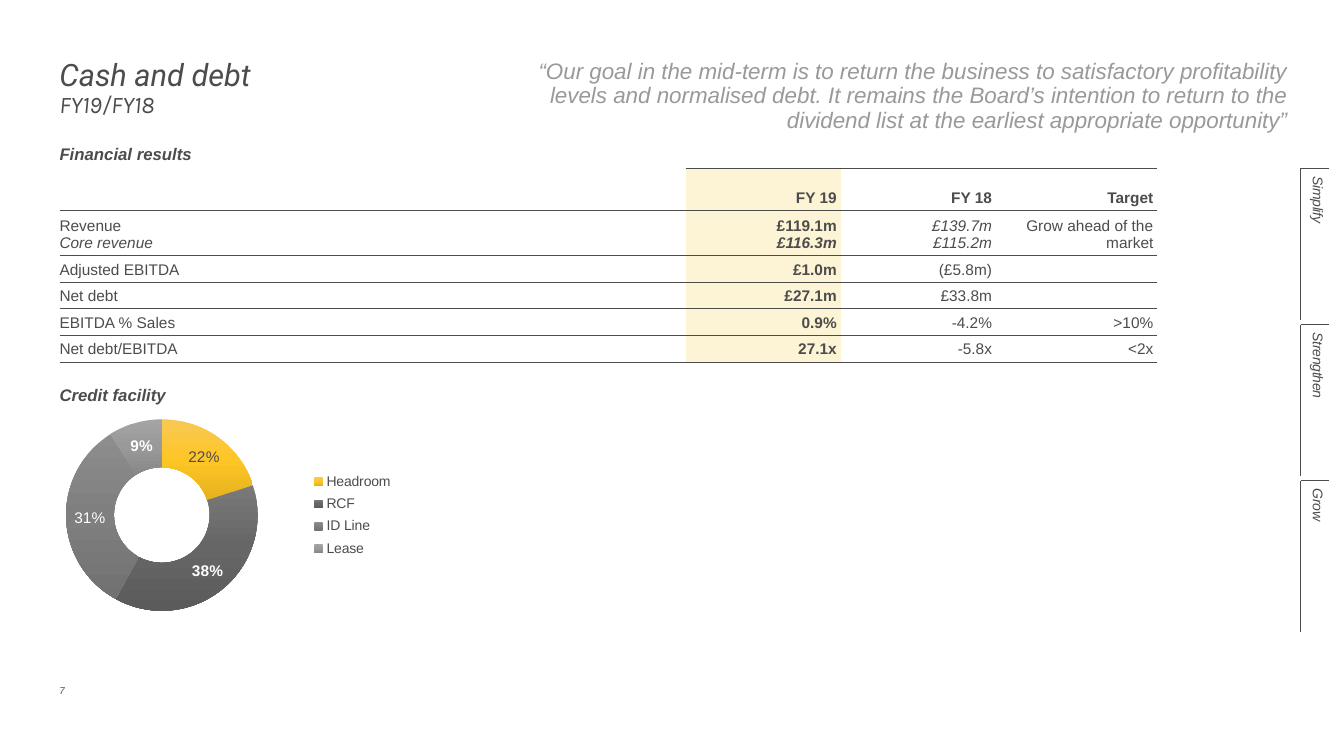
from copy import deepcopy
from dataclasses import dataclass

from lxml import etree
from pptx import Presentation
from pptx import util as u
from pptx.chart.data import CategoryChartData
from pptx.dml.color import RGBColor
from pptx.enum import chart as charts, shapes, text
from pptx.oxml import parse_xml
from pptx.oxml.ns import nsdecls, qn


@dataclass(frozen=True)
class Theme:
    ink: str = "4C4C4C"
    quiet: str = "999999"
    white: str = "FFFFFF"
    highlight: str = "FDF3D5"
    body_font: str = "Arial"
    title_font: str = "Roboto"
    subtitle_font: str = "Karla"
    title: float = 22
    subtitle: float = 17
    quote: float = 16
    heading: float = 12
    table: float = 11
    small: float = 10
    footer: float = 7
    rule: float = 0.5


THEME = Theme()
NO_STYLE = "{2D5ABB26-0587-4C30-8999-92F81FD0307C}"
COLUMNS = [621, 154, 154, 160]
ROWS = [27, 42, 42, 25, 25, 25, 25]
RESULTS = [
    ["Financial results", "", "", ""],
    ["", "FY 19", "FY 18", "Target"],
    ["Revenue\nCore revenue", "£119.1m\n£116.3m", "£139.7m\n£115.2m", "Grow ahead of the market"],
    ["Adjusted EBITDA", "£1.0m", "(£5.8m)", ""],
    ["Net debt", "£27.1m", "£33.8m", ""],
    ["EBITDA % Sales", "0.9%", "-4.2%", ">10%"],
    ["Net debt/EBITDA", "27.1x", "-5.8x", "<2x"],
]
FACILITY = {
    "Headroom": (20, ["F8C856", "FEC625", "E5B11E"]),
    "RCF": (38, ["797979", "666666", "5B5B5B"]),
    "ID Line": (33, ["8D8D8D", "7F7F7F", "717171"]),
    "Lease": (9, ["A4A4A4", "999999", "888888"]),
}
SHARE_NOTES = {0: ("22%", THEME.ink), 2: ("31%", THEME.white)}


def px(length):
    return u.Emu(length * 9144)


def style(font, size, color=THEME.ink, name=THEME.body_font, bold=False, italic=False):
    font.size, font.name, font.bold, font.italic = u.Pt(size), name, bold, italic
    font.color.rgb = RGBColor.from_string(color)


def add_text(slide, box, words, size, align=text.PP_ALIGN.LEFT, spacing=1.0,
             anchor=text.MSO_ANCHOR.TOP, **look):
    label = slide.shapes.add_textbox(*map(px, box))
    frame = label.text_frame
    frame.word_wrap = True
    frame.vertical_anchor = anchor
    frame.margin_left = frame.margin_right = frame.margin_top = frame.margin_bottom = 0
    paragraph = frame.paragraphs[0]
    paragraph.alignment, paragraph.line_spacing = align, spacing
    run = paragraph.add_run()
    run.text = words
    style(run.font, size, italic=True, **look)
    return label


def add_rule(slide, x1, y1, x2, y2):
    rule = slide.shapes.add_connector(shapes.MSO_CONNECTOR.STRAIGHT, *map(px, (x1, y1, x2, y2)))
    rule.line.width = u.Pt(THEME.rule)
    rule.line.color.rgb = RGBColor.from_string(THEME.ink)
    etree.SubElement(rule._element.spPr, qn("a:effectLst"))


def add_tabs(slide, box):
    left, top, width, height = box
    for index, pillar in enumerate(["Simplify", "Strengthen", "Grow"]):
        y = top + index * 155
        label = add_text(slide, (left - 55, y + 69, 142, 20), pillar, THEME.small)
        label.rotation = 90
        label.text_frame.paragraphs[0].runs[0].font._element.set("spc", "-20")
        add_rule(slide, left, y, left, y + height)
        add_rule(slide, left, y, left + width, y)


def add_header(slide, box):
    left, top, width, height = box
    add_text(slide, (left, top, 450, 31), "Cash and debt", THEME.title,
             spacing=0.9, name=THEME.title_font)
    add_text(slide, (left, top + 33, 450, 32), "FY19/FY18", THEME.subtitle,
             spacing=0.9, name=THEME.subtitle_font)
    add_text(slide, (left + width - 764, top + 1, 764, height),
             "“Our goal in the mid-term is to return the business to satisfactory "
             "profitability levels and normalised debt. It remains the Board’s intention "
             "to return to the dividend list at the earliest appropriate opportunity”",
             THEME.quote, text.PP_ALIGN.RIGHT, 0.9, color=THEME.quiet)


def underline(cell):
    line = parse_xml(
        f'<a:lnB {nsdecls("a")} w="{u.Pt(THEME.rule)}"><a:solidFill>'
        f'<a:srgbClr val="{THEME.ink}"/></a:solidFill></a:lnB>')
    cell._tc.get_or_add_tcPr().insert(0, line)


def fill_cell(cell, words, row, column):
    cell.margin_left = cell.margin_right = px(4 if column else 0)
    cell.margin_top = cell.margin_bottom = px(4)
    cell.vertical_anchor = text.MSO_ANCHOR.BOTTOM
    if row and column == 1:
        cell.fill.solid()
        cell.fill.fore_color.rgb = RGBColor.from_string(THEME.highlight)
    else:
        cell.fill.background()
    if row or column:
        underline(cell)
    frame = cell.text_frame
    for index, line in enumerate(words.split("\n")):
        paragraph = frame.add_paragraph() if index else frame.paragraphs[0]
        paragraph.alignment = text.PP_ALIGN.RIGHT if column else text.PP_ALIGN.LEFT
        if not line:
            etree.SubElement(paragraph._p, qn("a:endParaRPr"), sz=str(THEME.table * 100))
            continue
        run = paragraph.add_run()
        run.text = line
        style(run.font, THEME.table if row else THEME.heading,
              bold=row < 2 or column == 1,
              italic=row == 0 or index == 1 or (row == 2 and column == 2))


def add_results(slide, box):
    table = slide.shapes.add_table(len(ROWS), len(COLUMNS), *map(px, box)).table
    table.first_row = table.horz_banding = False
    table._tbl.tblPr.find(qn("a:tableStyleId")).text = NO_STYLE
    for column, width in zip(table.columns, COLUMNS):
        column.width = px(width)
    for row, height in zip(table.rows, ROWS):
        row.height = px(height)
    for row, entries in enumerate(RESULTS):
        for column, words in enumerate(entries):
            fill_cell(table.cell(row, column), words, row, column)


def place(parent, position, inner, x, y, w, h):
    for layout in parent.findall(qn("c:layout")):
        parent.remove(layout)
    target = '<c:layoutTarget val="inner"/>' if inner else ""
    parent.insert(position, parse_xml(
        f'<c:layout {nsdecls("c")}><c:manualLayout>{target}'
        f'<c:xMode val="edge"/><c:yMode val="edge"/><c:x val="{x}"/><c:y val="{y}"/>'
        f'<c:w val="{w}"/><c:h val="{h}"/></c:manualLayout></c:layout>'))


def shade(series):
    for index, (_, colors) in enumerate(FACILITY.values()):
        look = series.points[index].format
        look.line.fill.background()
        look.fill.gradient()
        look.fill.gradient_angle = 270
        first = look.fill.gradient_stops[0]._gs
        first.addnext(deepcopy(first))
        for stop, color, position in zip(look.fill.gradient_stops, colors, (0, 0.5, 1)):
            stop.color.rgb = RGBColor.from_string(color)
            stop.position = position


def add_facility(slide, box):
    left, top, width, height = box
    add_text(slide, (left, top, 331, 23), "Credit facility", THEME.heading,
             anchor=text.MSO_ANCHOR.BOTTOM, bold=True)
    data = CategoryChartData()
    data.categories = list(FACILITY)
    data.add_series("Series 1", [share for share, _ in FACILITY.values()])
    chart = slide.shapes.add_chart(charts.XL_CHART_TYPE.DOUGHNUT,
                                   *map(px, (left, top + 37, width, height - 37)), data).chart
    chart.has_title = False
    style(chart.font, THEME.small)
    chart.has_legend = True
    chart.legend.position = charts.XL_LEGEND_POSITION.RIGHT
    chart.legend.include_in_layout = False
    style(chart.legend.font, THEME.small)
    place(chart.legend._element, 1, False, 0.69, 0.25, 0.28, 0.5)
    plot = chart.plots[0]
    place(plot._element.getparent(), 0, True, 0.01, 0, 0.56, 1)
    plot._element.find(qn("c:holeSize")).set("val", "55")
    series = plot.series[0]
    shade(series)
    labels = series.data_labels
    labels.show_percentage, labels.show_value = True, False
    labels.number_format, labels.number_format_is_linked = "0%", False
    style(labels.font, THEME.table, THEME.white, bold=True)
    for index, (words, color) in SHARE_NOTES.items():
        run = series.points[index].data_label.text_frame.paragraphs[0].add_run()
        run.text = words
        style(run.font, THEME.table, color)


def main():
    deck = Presentation()
    deck.slide_width, deck.slide_height = px(1333), px(750)
    slide = deck.slides.add_slide(deck.slide_layouts[6])
    add_tabs(slide, (1290, 167, 28, 150))
    add_header(slide, (59, 59, 1218, 82))
    add_results(slide, (59, 139, sum(COLUMNS), sum(ROWS)))
    add_facility(slide, (59, 379, 350, 227))
    add_text(slide, (59, 679, 516, 12), "7", THEME.footer)
    deck.save("out.pptx")


if __name__ == "__main__":
    main()
